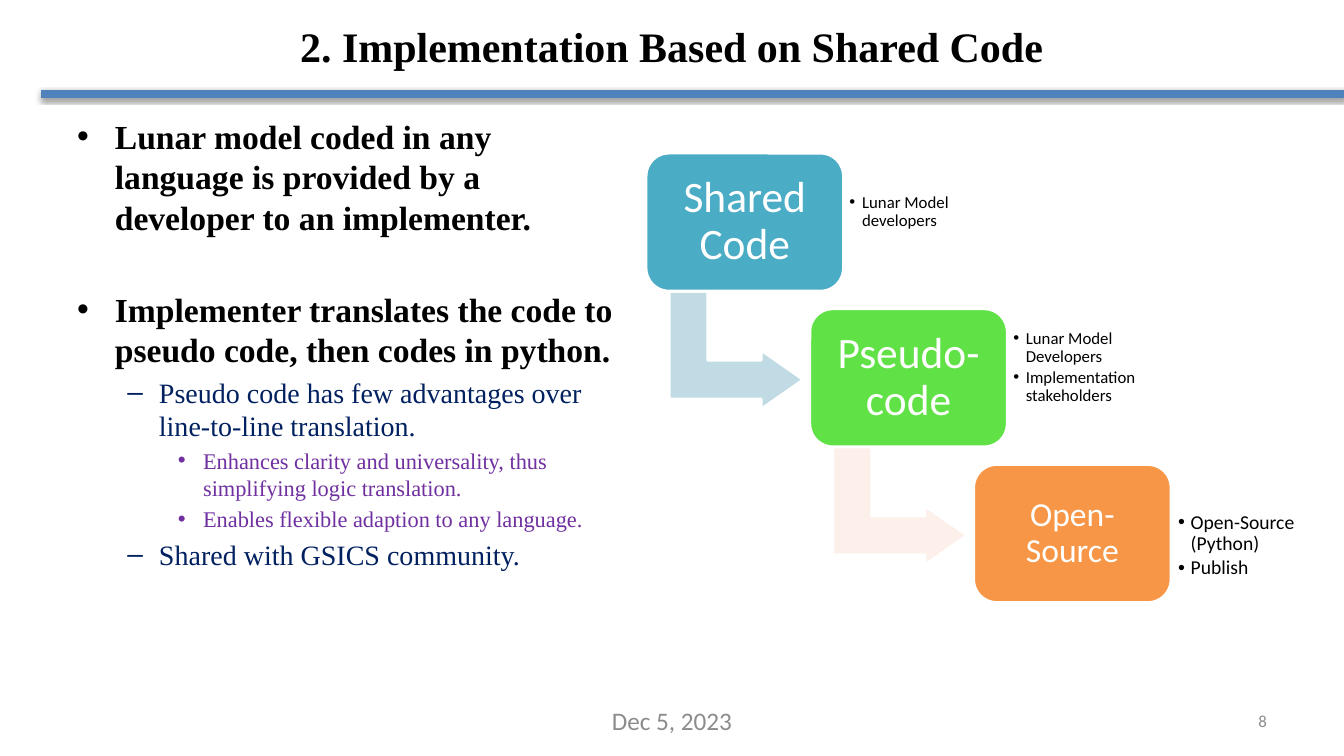
"""Build the slide on implementing lunar models from shared code."""
from dataclasses import dataclass
from typing import Any

import lxml.etree
import pptx
import pptx.dml.color
import pptx.enum.shapes
import pptx.enum.text
import pptx.oxml.ns
import pptx.util

Pt = pptx.util.Pt
qn = pptx.oxml.ns.qn
Align = pptx.enum.text.PP_ALIGN
Anchor = pptx.enum.text.MSO_ANCHOR
ShapeKind = pptx.enum.shapes.MSO_SHAPE


@dataclass(frozen=True)
class Theme:
    serif: str = "Times New Roman"
    sans: str = "Calibri"
    black: str = "000000"
    white: str = "FFFFFF"
    navy: str = "002060"
    purple: str = "7030A0"
    gray: str = "8C8C8C"
    rule: str = "4F81BD"
    teal: str = "4BACC6"
    green: str = "60E146"
    orange: str = "F79646"
    pale_teal: str = "C1DBE5"
    pale_orange: str = "FDEFE9"
    title_size: float = 30
    body_sizes: tuple[float, ...] = (24, 20, 16)
    step_size: float = 31
    small_step_size: float = 24
    note_size: float = 12
    large_note_size: float = 14
    date_size: float = 18
    number_size: float = 12


@dataclass(frozen=True)
class Box:
    left: float
    top: float
    width: float
    height: float


@dataclass(frozen=True)
class Level:
    bullet: str
    margin: float
    hanging: float
    color: str
    bold: bool = False


@dataclass(frozen=True)
class Point:
    text: str
    level: int = 0
    gap: float = 0


@dataclass(frozen=True)
class Step:
    label: str
    fill: str
    size: float
    notes: tuple[str, ...]
    note_size: float
    note_shift: float
    note_inset: float
    arrow_fill: str | None = None


THEME = Theme()
LEVELS = (
    Level("•", 27, 27, THEME.black, True),
    Level("–", 58.5, 22.5, THEME.navy),
    Level("•", 90, 18, THEME.purple),
)
POINTS = (
    Point("Lunar model coded in any language is provided by a developer to an implementer."),
    Point("Implementer translates the code to pseudo code, then codes in python.", gap=32.4),
    Point("Pseudo code has few advantages over line-to-line translation.", 1),
    Point("Enhances clarity and universality, thus simplifying logic translation.", 2),
    Point("Enables flexible adaption to any language.", 2),
    Point("Shared with GSICS community.", 1),
)
STEPS = (
    Step("Shared Code", THEME.teal, THEME.step_size, ("Lunar Model developers",),
         THEME.note_size, -7.5, 4.3, THEME.pale_teal),
    Step("Pseudo-code", THEME.green, THEME.step_size,
         ("Lunar Model Developers", "Implementation stakeholders"),
         THEME.note_size, -7.5, 4.3, THEME.pale_orange),
    Step("Open-Source", THEME.orange, THEME.small_step_size,
         ("Open-Source (Python)", "Publish"), THEME.large_note_size, 8.7, 5),
)
FIRST_STEP = Box(461.5, 109.4, 141, 98.6)
STEP_RIGHT, STEP_DOWN = 117, 111.2


def rgb(color: str) -> pptx.dml.color.RGBColor:
    """Return the colour object for a hex value."""
    return pptx.dml.color.RGBColor.from_string(color)


def lengths(box: Box) -> tuple[Any, ...]:
    """Return the box as slide lengths."""
    return Pt(box.left), Pt(box.top), Pt(box.width), Pt(box.height)


def prepare_frame(frame: Any, anchor: Any, horizontal: float, vertical: float) -> Any:
    """Set wrapping, anchor and insets of a text frame."""
    frame.word_wrap = True
    frame.vertical_anchor = anchor
    frame.margin_left = frame.margin_right = Pt(horizontal)
    frame.margin_top = frame.margin_bottom = Pt(vertical)
    return frame


def add_frame(slide: Any, box: Box, anchor: Any = Anchor.MIDDLE,
              horizontal: float = 7.2, vertical: float = 3.6) -> Any:
    """Add a text box and return its frame."""
    frame = slide.shapes.add_textbox(*lengths(box)).text_frame
    return prepare_frame(frame, anchor, horizontal, vertical)


def write(frame: Any, text: str, *, size: float, color: str, font: str = THEME.sans,
          bold: bool = False, align: Any = Align.LEFT, level: int = 0, bullet: str = "",
          margin: float = 0, hanging: float = 0, before: float = 0,
          after: float = 0, spacing: float = 1.0) -> None:
    """Write one formatted paragraph at the end of a frame."""
    is_first = not frame.paragraphs[0].runs
    paragraph = frame.paragraphs[0] if is_first else frame.add_paragraph()
    paragraph.alignment = align
    paragraph.level = level
    paragraph.line_spacing = spacing
    paragraph.space_before = Pt(0 if is_first else before)
    paragraph.space_after = Pt(after)
    if bullet:
        properties = paragraph._p.get_or_add_pPr()
        properties.set("marL", str(Pt(margin)))
        properties.set("indent", str(-Pt(hanging)))
        lxml.etree.SubElement(properties, qn("a:buFont")).set("typeface", "Arial")
        lxml.etree.SubElement(properties, qn("a:buChar")).set("char", bullet)
    run = paragraph.add_run()
    run.text = text
    run.font.name = font
    run.font.size = Pt(size)
    run.font.bold = bold
    run.font.color.rgb = rgb(color)


def add_block(slide: Any, kind: Any, box: Box, fill: str, adjustments: tuple[float, ...]) -> Any:
    """Add a filled preset shape with a white outline."""
    shape = slide.shapes.add_shape(kind, *lengths(box))
    shape.shadow.inherit = False
    shape.fill.solid()
    shape.fill.fore_color.rgb = rgb(fill)
    shape.line.color.rgb = rgb(THEME.white)
    shape.line.width = Pt(2)
    for index, value in enumerate(adjustments):
        shape.adjustments[index] = value
    return shape


def add_rule(slide: Any) -> None:
    """Add the shadowed line under the title."""
    rule = slide.shapes.add_connector(
        pptx.enum.shapes.MSO_CONNECTOR.STRAIGHT, Pt(29.5), Pt(67), Pt(960), Pt(67))
    rule.line.color.rgb = rgb(THEME.rule)
    rule.line.width = Pt(6)
    effects = lxml.etree.SubElement(rule._element.spPr, qn("a:effectLst"))
    shadow = lxml.etree.SubElement(effects, qn("a:outerShdw"), blurRad=str(Pt(3.1)),
                                   dist=str(Pt(1.6)), dir="5400000", rotWithShape="0")
    color = lxml.etree.SubElement(shadow, qn("a:srgbClr"), val=THEME.black)
    lxml.etree.SubElement(color, qn("a:alpha"), val="38000")


def add_step(slide: Any, step: Step, index: int) -> None:
    """Add one step with its arrow and notes."""
    left = FIRST_STEP.left + index * STEP_RIGHT
    top = FIRST_STEP.top + index * STEP_DOWN
    if step.arrow_fill:
        arrow = add_block(slide, ShapeKind.BENT_UP_ARROW, Box(left + 22.3, top + 92.9, 84.2, 95.8),
                          step.arrow_fill, (0.328, 0.25, 0.358))
        arrow.rotation = 90
    block = add_block(slide, ShapeKind.ROUNDED_RECTANGLE,
                      Box(left, top, FIRST_STEP.width, FIRST_STEP.height), step.fill, (0.167,))
    label = prepare_frame(block.text_frame, Anchor.MIDDLE, 8, 8)
    write(label, step.label, size=step.size, color=THEME.white, align=Align.CENTER, spacing=0.9)
    notes = add_frame(slide, Box(left + FIRST_STEP.width, top + 9.4 + step.note_shift, 103, 80),
                      horizontal=step.note_inset, vertical=step.note_inset)
    for note in step.notes:
        write(notes, note, size=step.note_size, color=THEME.black, level=1, bullet="•",
              margin=9, hanging=9, after=0.15 * step.note_size, spacing=0.9)


def main() -> None:
    """Build and save the presentation."""
    presentation = pptx.Presentation()
    presentation.slide_width, presentation.slide_height = Pt(960), Pt(540)
    slide = presentation.slides.add_slide(presentation.slide_layouts[6])
    add_rule(slide)
    write(add_frame(slide, Box(48, 5, 864, 55.4)), "2. Implementation Based on Shared Code",
          size=THEME.title_size, color=THEME.black, font=THEME.serif, bold=True, align=Align.CENTER)
    body = add_frame(slide, Box(48, 79.2, 405.4, 397.4), Anchor.TOP)
    for point in POINTS:
        level, size = LEVELS[point.level], THEME.body_sizes[point.level]
        write(body, point.text, size=size, color=level.color, font=THEME.serif, bold=level.bold,
              level=point.level, bullet=level.bullet, margin=level.margin, hanging=level.hanging,
              before=0.2 * size + point.gap)
    for index, step in enumerate(STEPS):
        add_step(slide, step, index)
    write(add_frame(slide, Box(688, 500.5, 224, 28.8)), "8", size=THEME.number_size,
          color=THEME.gray, align=Align.RIGHT)
    write(add_frame(slide, Box(328, 500.5, 304, 28.8), Anchor.TOP), "Dec 5, 2023",
          size=THEME.date_size, color=THEME.gray, align=Align.CENTER)
    presentation.save("out.pptx")


if __name__ == "__main__":
    main()
